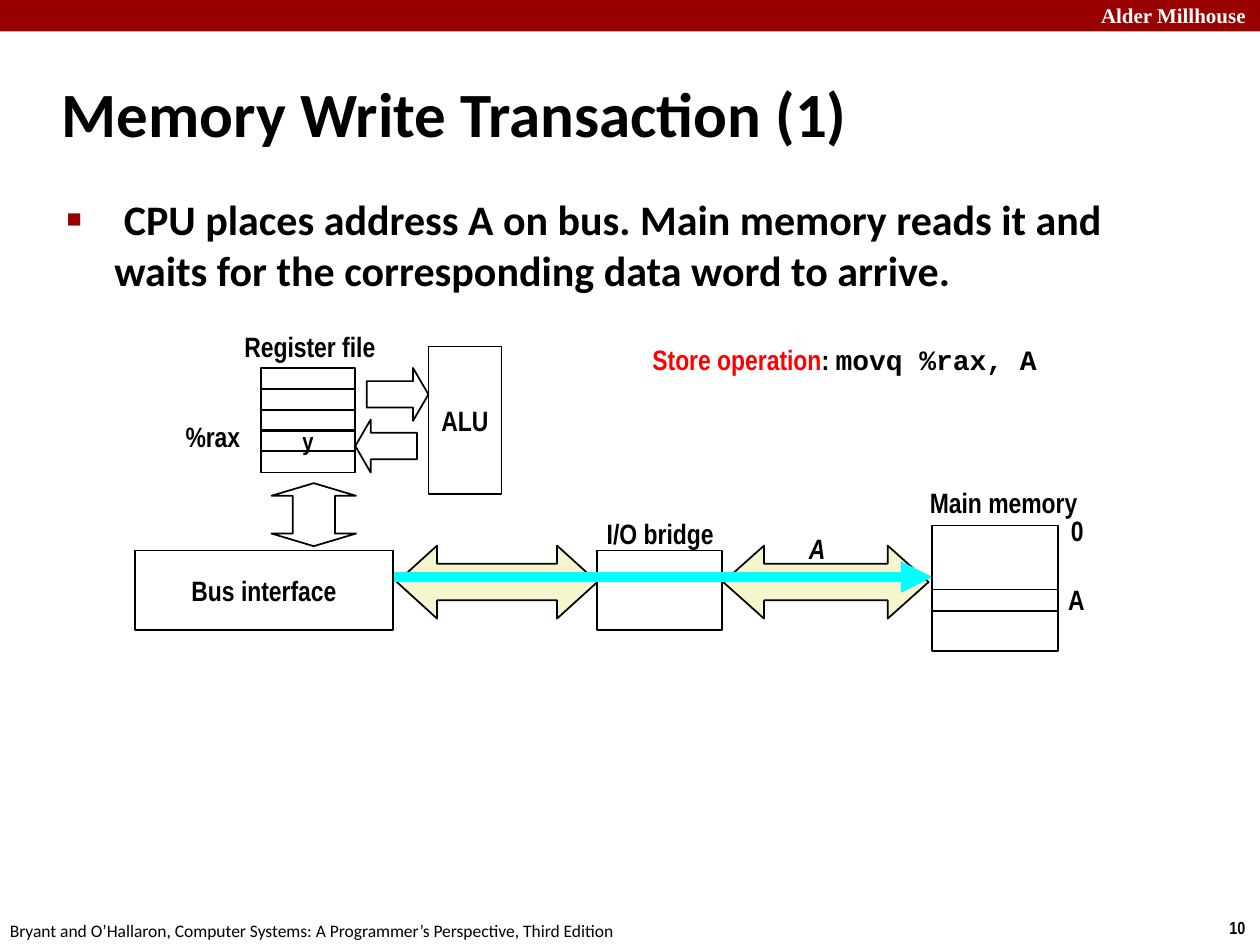
from lxml import etree
from pptx import Presentation
from pptx.dml.color import RGBColor
from pptx.enum.shapes import MSO_CONNECTOR, MSO_SHAPE
from pptx.enum.text import MSO_ANCHOR, PP_ALIGN
from pptx.oxml.ns import qn
from pptx.util import Inches, Pt

RECT = MSO_SHAPE.RECTANGLE
BOTH_WAYS = MSO_SHAPE.LEFT_RIGHT_ARROW
RIGHT_ARROW, LEFT_ARROW = MSO_SHAPE.RIGHT_ARROW, MSO_SHAPE.LEFT_ARROW
TOP, MIDDLE = MSO_ANCHOR.TOP, MSO_ANCHOR.MIDDLE
LEFT, CENTER = PP_ALIGN.LEFT, PP_ALIGN.CENTER

BLACK = RGBColor(0x00, 0x00, 0x00)
WHITE = RGBColor(0xFF, 0xFF, 0xFF)
MAROON = RGBColor(0x99, 0x00, 0x00)
CREAM = RGBColor(0xF7, 0xF5, 0xCD)
CYAN = RGBColor(0x00, 0xFF, 0xFF)
RED = RGBColor(0xFF, 0x00, 0x00)
NARROW, BODY, MONO, SERIF = "Arial Narrow", "Calibri", "Courier New", "Times New Roman"

TITLE = "Memory Write Transaction (1)"
BULLET = (" CPU places address A on bus. Main memory reads it and "
          "waits for the corresponding data word to arrive.")
SCHOOL = "Alder Millhouse"
PAGE = "10"
FOOTER = "Bryant and O’Hallaron, Computer Systems: A Programmer’s Perspective, Third Edition"
REGISTERS = ["", "", "", "y", ""]
REGISTER_LEFT, REGISTER_TOP, REGISTER_W, REGISTER_H = 2.07, 2.92, 0.75, 0.17
REGISTER_STEP = 0.165

BUSES = [
    (BOTH_WAYS, (5.74, 4.33, 1.63, 0.58), (0.5, 0.56), CREAM, 0),
    (BOTH_WAYS, (3.15, 4.33, 1.59, 0.58), (0.5, 0.55), CREAM, 0),
]
CPU_ARROWS = [
    (RIGHT_ARROW, (2.91, 2.92, 0.49, 0.42), (0.5, 0.29), None, 0),
    (LEFT_ARROW, (2.82, 3.33, 0.49, 0.42), (0.5, 0.29), None, 0),
    (BOTH_WAYS, (2.24, 3.75, 0.5, 0.67), (0.5, 0.2), None, 90),
]
IO_BRIDGE = (4.74, 4.37, 0.99, 0.63)
ALU = (3.4, 2.75, 0.58, 1.17)
BUS_INTERFACE = (1.07, 4.37, 2.05, 0.63)
MEMORY = [(7.4, 4.17, 1, 1), (7.4, 4.68, 1, 0.17)]
SIGNAL = (3.07, 4.58, 7.4, 4.58)
LABELS = [
    ("Register file", (1.83, 2.56, 1.26, 0.37), CENTER, False),
    ("A", (6.3, 4.17, 0.37, 0.37), CENTER, True),
    ("Main memory", (7.27, 3.8, 1.39, 0.37), CENTER, False),
    ("0", (8.4, 4.02, 0.32, 0.37), LEFT, False),
    ("A", (8.38, 4.57, 0.36, 0.37), LEFT, False),
    ("%rax", (1.37, 3.28, 0.64, 0.37), CENTER, False),
    ("I/O bridge", (4.71, 4.05, 1.06, 0.37), CENTER, False),
]
STORE = [("Store operation", NARROW, RED), (": ", NARROW, BLACK), ("movq %rax, A", MONO, BLACK)]


def style(r, size, font, color=BLACK, bold=True, italic=False):
    r.font.size, r.font.name = Pt(size), font
    r.font.bold, r.font.italic = bold, italic
    r.font.color.rgb = color


def write(sp, text, size, font=NARROW, color=BLACK, bold=True, italic=False,
          align=LEFT, anchor=TOP, wrap=False):
    tf = sp.text_frame
    tf.text = text
    tf.word_wrap, tf.vertical_anchor = wrap, anchor
    p = tf.paragraphs[0]
    p.alignment = align
    style(p.runs[0], size, font, color, bold, italic)
    return p


def add_text(s, at, text, size, **look):
    return write(s.shapes.add_textbox(*map(Inches, at)), text, size, **look)


def add_box(s, at, kind=RECT, fill=None, text="", size=16, line=BLACK):
    sp = s.shapes.add_shape(kind, *map(Inches, at))
    sp.shadow.inherit = False
    if fill is None:
        sp.fill.background()
    else:
        sp.fill.solid()
        sp.fill.fore_color.rgb = fill
    if line is None:
        sp.line.fill.background()
    else:
        sp.line.color.rgb, sp.line.width = line, Pt(1)
    if text:
        write(sp, text, size, align=CENTER, anchor=MIDDLE)
    return sp


def add_arrows(s, arrows):
    for kind, at, adjust, fill, rotation in arrows:
        sp = add_box(s, at, kind, fill)
        sp.rotation = rotation
        for i, value in enumerate(adjust):
            sp.adjustments[i] = value


def hang(p, indent):
    pPr = p._p.get_or_add_pPr()
    pPr.set("marL", str(Inches(indent)))
    pPr.set("indent", str(-Inches(indent)))
    return pPr


def add_bullet(pPr):
    color = etree.SubElement(pPr, qn("a:buClr"))
    etree.SubElement(color, qn("a:srgbClr"), val=str(MAROON))
    etree.SubElement(pPr, qn("a:buSzPct"), val="60000")
    etree.SubElement(pPr, qn("a:buFont"), typeface="Arial")
    etree.SubElement(pPr, qn("a:buChar"), char="■")


def add_signal(s):
    cn = s.shapes.add_connector(MSO_CONNECTOR.STRAIGHT, *map(Inches, SIGNAL))
    cn.line.color.rgb, cn.line.width = CYAN, Pt(6)
    etree.SubElement(cn.line._get_or_add_ln(), qn("a:tailEnd"), type="triangle")
    etree.SubElement(cn._element.spPr, qn("a:effectLst"))


def add_frame(s):
    add_box(s, (0, 0, 10, 0.25), fill=MAROON, line=None)
    add_text(s, (8.64, -0.03, 1.43, 0.3), SCHOOL, 12, font=SERIF, color=WHITE, wrap=True)
    add_text(s, (9.66, 7.23, 0.34, 0.27), PAGE, 10)
    add_text(s, (-0.02, 7.25, 5.08, 0.27), FOOTER, 10, font=BODY, bold=False)


def add_headings(s):
    title = s.shapes.title
    title.left, title.top, title.width, title.height = map(Inches, (0.39, 0.48, 8.3, 0.83))
    hang(write(title, TITLE, 36, font=BODY, anchor=MIDDLE, wrap=True), 0.13)
    p = add_text(s, (0.43, 1.49, 8.64, 5.44), BULLET, 24, font=BODY, wrap=True)
    p.space_before = Pt(4.8)
    add_bullet(hang(p, 0.38))


def add_diagram(s):
    add_arrows(s, BUSES)
    add_box(s, IO_BRIDGE)
    for i, value in enumerate(REGISTERS):
        top = REGISTER_TOP + i * REGISTER_STEP
        add_box(s, (REGISTER_LEFT, top, REGISTER_W, REGISTER_H), text=value, size=14)
    add_arrows(s, CPU_ARROWS)
    add_box(s, ALU, text="ALU")
    add_signal(s)
    add_box(s, BUS_INTERFACE, fill=WHITE, text="Bus interface")
    for at in MEMORY:
        add_box(s, at)
    for text, at, align, italic in LABELS:
        add_text(s, at, text, 16, align=align, italic=italic, anchor=MIDDLE)


def add_store_operation(s):
    tf = s.shapes.add_textbox(*map(Inches, (5.08, 2.67, 3.3, 0.64))).text_frame
    tf.word_wrap = False
    for text, font, color in STORE:
        r = tf.paragraphs[0].add_run()
        r.text = text
        style(r, 16, font, color)


def main():
    prs = Presentation()
    prs.slide_width, prs.slide_height = Inches(10), Inches(7.5)
    s = prs.slides.add_slide(prs.slide_layouts[5])
    add_frame(s)
    add_headings(s)
    add_diagram(s)
    add_store_operation(s)
    prs.save("out.pptx")


if __name__ == "__main__":
    main()
